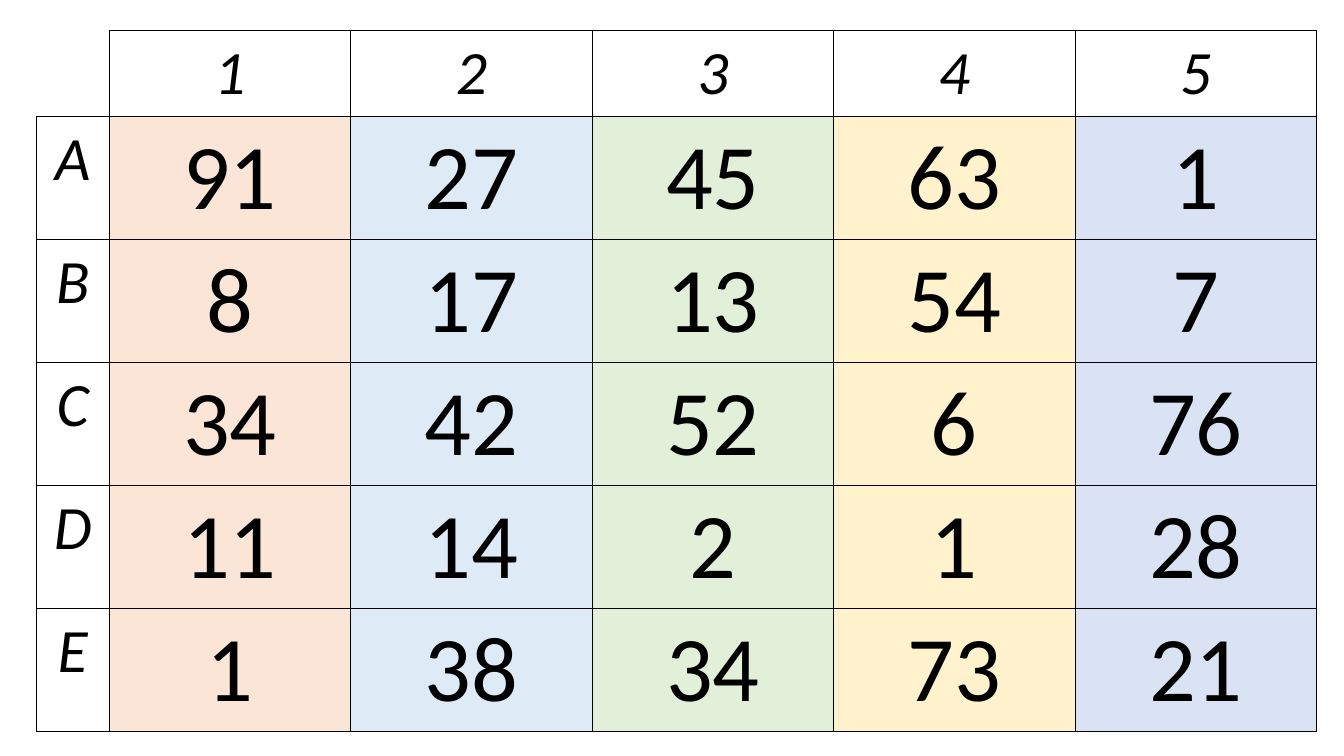
from dataclasses import dataclass

from lxml import etree
from pptx import Presentation
from pptx.dml.color import RGBColor
from pptx.enum.text import PP_ALIGN
from pptx.oxml.ns import qn
from pptx.util import Pt

CENTER = PP_ALIGN.CENTER


@dataclass(frozen=True)
class Theme:
    font: str = "Calibri"
    ink: str = "000000"
    label_size: int = 44
    value_size: int = 66
    column_fills: tuple = ("FBE5D6", "DEEBF7", "E2F0D9", "FFF2CC", "DAE3F3")


THEME = Theme()
COLUMN_LABELS = ["", "1", "2", "3", "4", "5"]
ROWS = [
    COLUMN_LABELS,
    ["A", "91", "27", "45", "63", "1"],
    ["B", "8", "17", "13", "54", "7"],
    ["C", "34", "42", "52", "6", "76"],
    ["D", "11", "14", "2", "1", "28"],
    ["E", "1", "38", "34", "73", "21"],
]
LABEL_WIDTH, VALUE_WIDTH = 52, 172.5
HEADER_HEIGHT, VALUE_HEIGHT = 61.2, 87.85


def set_borders(cell, visible):
    """Rule the listed sides (L, R, T, B) and clear the others."""
    properties = cell._tc.get_or_add_tcPr()
    for index, side in enumerate("LRTB"):
        line = etree.Element(qn(f"a:ln{side}"), w=str(Pt(1)))
        if side in visible:
            fill = etree.SubElement(line, qn("a:solidFill"))
            etree.SubElement(fill, qn("a:srgbClr"), val=THEME.ink)
        else:
            etree.SubElement(line, qn("a:noFill"))
        properties.insert(index, line)


deck = Presentation()
deck.slide_width, deck.slide_height = Pt(960), Pt(540)
page = deck.slides.add_slide(deck.slide_layouts[6])

value_count = len(THEME.column_fills)
table = page.shapes.add_table(
    len(ROWS), len(COLUMN_LABELS), Pt(26), Pt(22),
    Pt(LABEL_WIDTH + value_count * VALUE_WIDTH),
    Pt(HEADER_HEIGHT + (len(ROWS) - 1) * VALUE_HEIGHT),
).table
table.first_row = False
table.horz_banding = False

for index, column in enumerate(table.columns):
    column.width = Pt(VALUE_WIDTH if index else LABEL_WIDTH)
for index, row in enumerate(table.rows):
    row.height = Pt(VALUE_HEIGHT if index else HEADER_HEIGHT)

for row_index, texts in enumerate(ROWS):
    for column_index, text in enumerate(texts):
        cell = table.cell(row_index, column_index)
        is_value = row_index > 0 and column_index > 0
        if is_value:
            cell.fill.solid()
            cell.fill.fore_color.rgb = RGBColor.from_string(
                THEME.column_fills[column_index - 1])
        else:
            cell.fill.background()
        set_borders(cell, "LRTB" if text else "RB")
        if not text:
            continue
        para = cell.text_frame.paragraphs[0]
        para.alignment = CENTER
        span = para.add_run()
        span.text = text
        span.font.name = THEME.font
        span.font.size = Pt(THEME.value_size if is_value else THEME.label_size)
        span.font.italic = not is_value
        span.font.color.rgb = RGBColor.from_string(THEME.ink)

deck.save("out.pptx")
